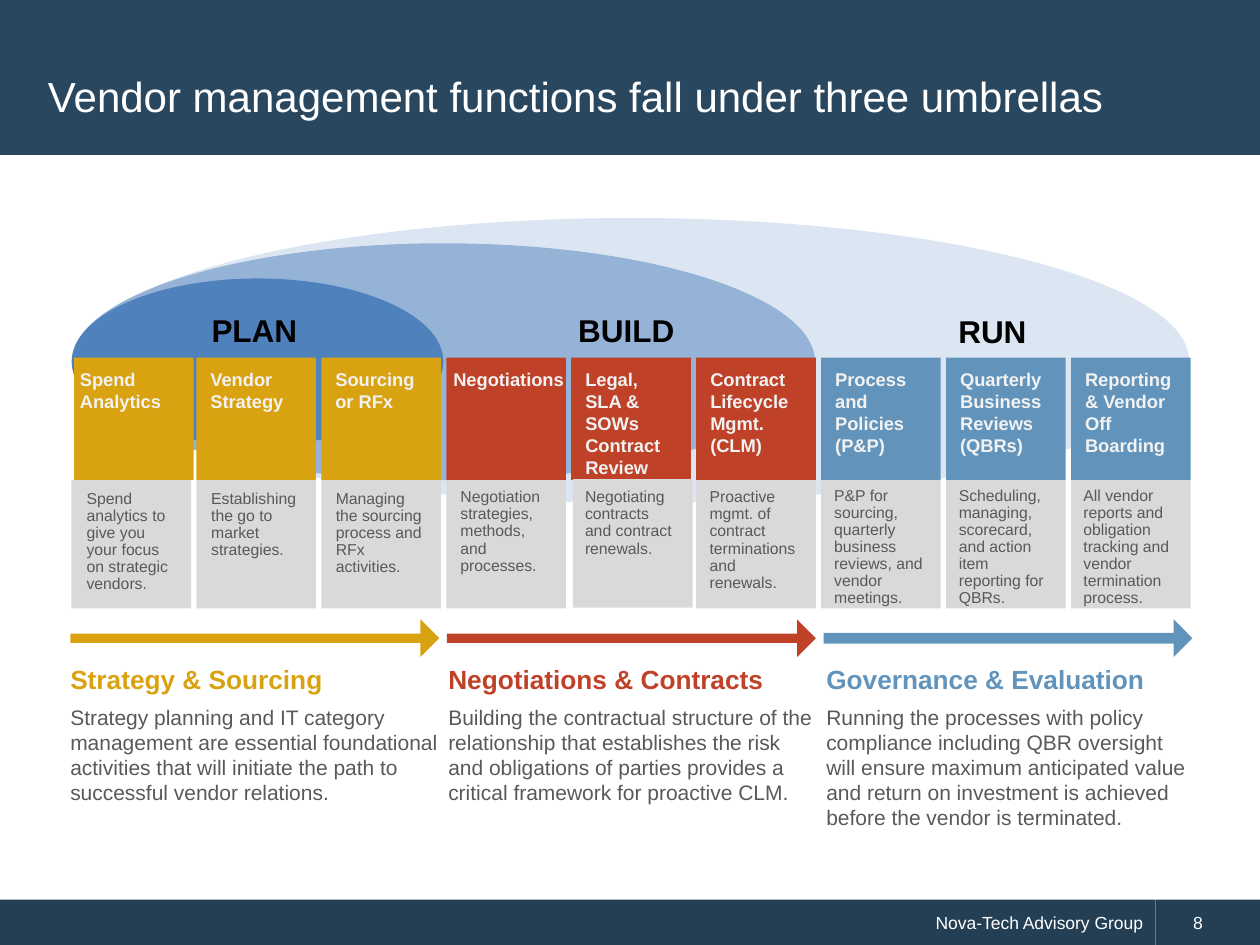
from dataclasses import dataclass

from pptx import Presentation
from pptx.dml.color import RGBColor
from pptx.enum.shapes import MSO_SHAPE
from pptx.enum.text import MSO_ANCHOR, PP_ALIGN
from pptx.util import Pt

WHITE, BLACK, GRAY, PANEL, PALE = "FFFFFF", "000000", "595959", "D9D9D9", "F2F2F2"
HEADER, FOOTER = "29475F", "243F54"
COLUMN_LEFT, COLUMN_PITCH, COLUMN_WIDTH = 40.8, 71.4, 68.4
NOTE_LEFT, NOTE_PITCH = 45.2, 71.2
TILE_TOP, TILE_HEIGHT, PANEL_HEIGHT = 204.3, 70, 73.4
PHASE_LEFT, PHASE_PITCH, PHASE_WIDTH = 40.2, 216, 211.4
ARROW_PITCH = 215.2
NO_SIDES = (0, 3.6, 0, 3.6)
NARROW_SIDES = (4.3, 3.6, 4.3, 3.6)
DEFAULT_SIDES = (7.2, 3.6, 7.2, 3.6)


@dataclass
class Card:
    """One vendor function; shifts are offsets in points from its column."""
    heading: str
    note: str
    heading_shift: float = 1
    heading_width: float = 66
    tile_shift: float = 0
    panel_shift: float = 0


@dataclass
class Phase:
    umbrella: str
    umbrella_box: tuple
    title: str
    summary: str
    color: str
    shaft: float
    note_top: float
    cards: list


ELLIPSES = [
    ((42.5, 124.6, 637, 162.7), "DCE6F2"),
    ((41, 139, 424.8, 135.4), "95B3D7"),
    ((41, 159.1, 212.4, 95), "4F81BD"),
]

PHASES = [
    Phase("PLAN", (113.8, 174.2, 67, 28.8), "Strategy & Sourcing",
          "Strategy planning and IT category management are essential foundational "
          "activities that will initiate the path to successful vendor relations.",
          "D9A210", 0.25, 276.8, [
              Card("Spend\nAnalytics",
                   "Spend analytics to give you your focus on strategic vendors.",
                   heading_shift=-2.2, tile_shift=1.5),
              Card("Vendor\nStrategy", "Establishing the go to market strategies."),
              Card("Sourcing or RFx", "Managing the sourcing process and RFx activities."),
          ]),
    Phase("BUILD", (323.3, 174.2, 79.9, 28.8), "Negotiations & Contracts",
          "Building the contractual structure of the relationship that establishes the risk "
          "and obligations of parties provides a critical framework for proactive CLM.",
          "BE4128", 0.25, 276, [
              Card("Negotiations", "Negotiation strategies, methods, and processes.",
                   heading_shift=-3, heading_width=80),
              Card("Legal,\nSLA &\nSOWs\nContract\nReview",
                   "Negotiating contracts and contract renewals.", panel_shift=1),
              Card("Contract\nLifecycle\nMgmt.\n(CLM)",
                   "Proactive mgmt. of contract terminations and renewals."),
          ]),
    Phase("RUN", (540.5, 175, 58.3, 28.8), "Governance & Evaluation",
          "Running the processes with policy compliance including QBR oversight will ensure "
          "maximum anticipated value and return on investment is achieved before the vendor "
          "is terminated.",
          "6294BB", 0.29, 275, [
              Card("Process\nand\nPolicies\n(P&P)",
                   "P&P for sourcing, quarterly business\nreviews, and vendor meetings."),
              Card("Quarterly\nBusiness\nReviews\n(QBRs)",
                   "Scheduling, managing, scorecard, and action item reporting for QBRs."),
              Card("Reporting\n& Vendor\nOff\nBoarding",
                   "All vendor reports and obligation tracking and vendor termination process."),
          ]),
]


def color_of(code):
    return RGBColor.from_string(code)


def points(values):
    return [Pt(value) for value in values]


def add_block(page, kind, bounds, fill):
    block = page.shapes.add_shape(kind, *points(bounds))
    block.shadow.inherit = False
    block.fill.solid()
    block.fill.fore_color.rgb = color_of(fill)
    block.line.fill.background()
    return block


def write(box, text, size, color, bold=False, align=PP_ALIGN.LEFT, spacing=None,
          sides=DEFAULT_SIDES, anchor=MSO_ANCHOR.TOP):
    """Fill a shape with text, one paragraph for each line."""
    frame = box.text_frame
    left, top, right, bottom = points(sides)
    frame_format = {"word_wrap": True, "vertical_anchor": anchor,
                    "margin_left": left, "margin_top": top,
                    "margin_right": right, "margin_bottom": bottom}
    for name, value in frame_format.items():
        setattr(frame, name, value)
    font_format = {"name": "Arial", "size": Pt(size), "bold": bold}
    frame.text = text
    for para in frame.paragraphs:
        para.alignment = align
        para.line_spacing = spacing
        for span in para.runs:
            for name, value in font_format.items():
                setattr(span.font, name, value)
            span.font.color.rgb = color_of(color)


def add_text(page, bounds, text, size, color, **options):
    write(page.shapes.add_textbox(*points(bounds)), text, size, color, **options)


def add_bars(page):
    add_block(page, MSO_SHAPE.RECTANGLE, (0, 0, 720, 88.6), HEADER)
    credit = add_block(page, MSO_SHAPE.RECTANGLE, (0, 514, 660.2, 26), FOOTER)
    write(credit, "Nova-Tech Advisory Group", 10, WHITE, align=PP_ALIGN.RIGHT,
          anchor=MSO_ANCHOR.MIDDLE)
    number = add_block(page, MSO_SHAPE.RECTANGLE, (660.2, 514, 59.8, 26), FOOTER)
    write(number, "8", 10, WHITE, sides=(21.6, 3.6, 7.2, 3.6), anchor=MSO_ANCHOR.MIDDLE)


def set_title(page, text):
    """Place the title and bring it in front of the header bar."""
    title = page.shapes.title
    bounds = {"left": 20.2, "top": 20.2, "width": 679, "height": 69.1}
    for name, value in bounds.items():
        setattr(title, name, Pt(value))
    write(title, text, 24, WHITE, anchor=MSO_ANCHOR.MIDDLE)
    title.element.getparent().append(title.element)


def add_card(page, column, card, phase):
    left = COLUMN_LEFT + column * COLUMN_PITCH
    panel_top = TILE_TOP + TILE_HEIGHT - card.panel_shift / 2
    add_block(page, MSO_SHAPE.RECTANGLE,
              (left + card.tile_shift, TILE_TOP, COLUMN_WIDTH, TILE_HEIGHT), phase.color)
    add_block(page, MSO_SHAPE.RECTANGLE,
              (left + card.panel_shift, panel_top, COLUMN_WIDTH, PANEL_HEIGHT), PANEL)
    add_text(page, (left + card.heading_shift, 206.8, card.heading_width, 58),
             card.heading, 10.5, PALE, bold=True)
    add_text(page, (NOTE_LEFT + column * NOTE_PITCH, phase.note_top, 60.5, 66),
             card.note, 9, GRAY, spacing=0.9, sides=NARROW_SIDES)


def add_phase(page, index, phase):
    arrow = add_block(page, MSO_SHAPE.RIGHT_ARROW,
                      (PHASE_LEFT + index * ARROW_PITCH, 354, 210.8, 21.5), phase.color)
    arrow.adjustments[0] = phase.shaft
    arrow.adjustments[1] = 0.5
    left = PHASE_LEFT + index * PHASE_PITCH
    add_text(page, (left, 375.2, PHASE_WIDTH, 25.2), phase.title, 15, phase.color,
             bold=True, sides=NO_SIDES)
    add_text(page, (left, 398.9, PHASE_WIDTH, 80), phase.summary, 12, GRAY, sides=NO_SIDES)
    for offset, card in enumerate(phase.cards):
        add_card(page, index * len(phase.cards) + offset, card, phase)
    add_text(page, phase.umbrella_box, phase.umbrella, 18, BLACK, bold=True)


def main():
    deck = Presentation()
    deck.slide_width, deck.slide_height = Pt(720), Pt(540)
    page = deck.slides.add_slide(deck.slide_layouts[5])
    add_bars(page)
    for bounds, fill in ELLIPSES:
        add_block(page, MSO_SHAPE.OVAL, bounds, fill)
    for index, phase in enumerate(PHASES):
        add_phase(page, index, phase)
    set_title(page, "Vendor management functions fall under three umbrellas")
    deck.save("out.pptx")


if __name__ == "__main__":
    main()
